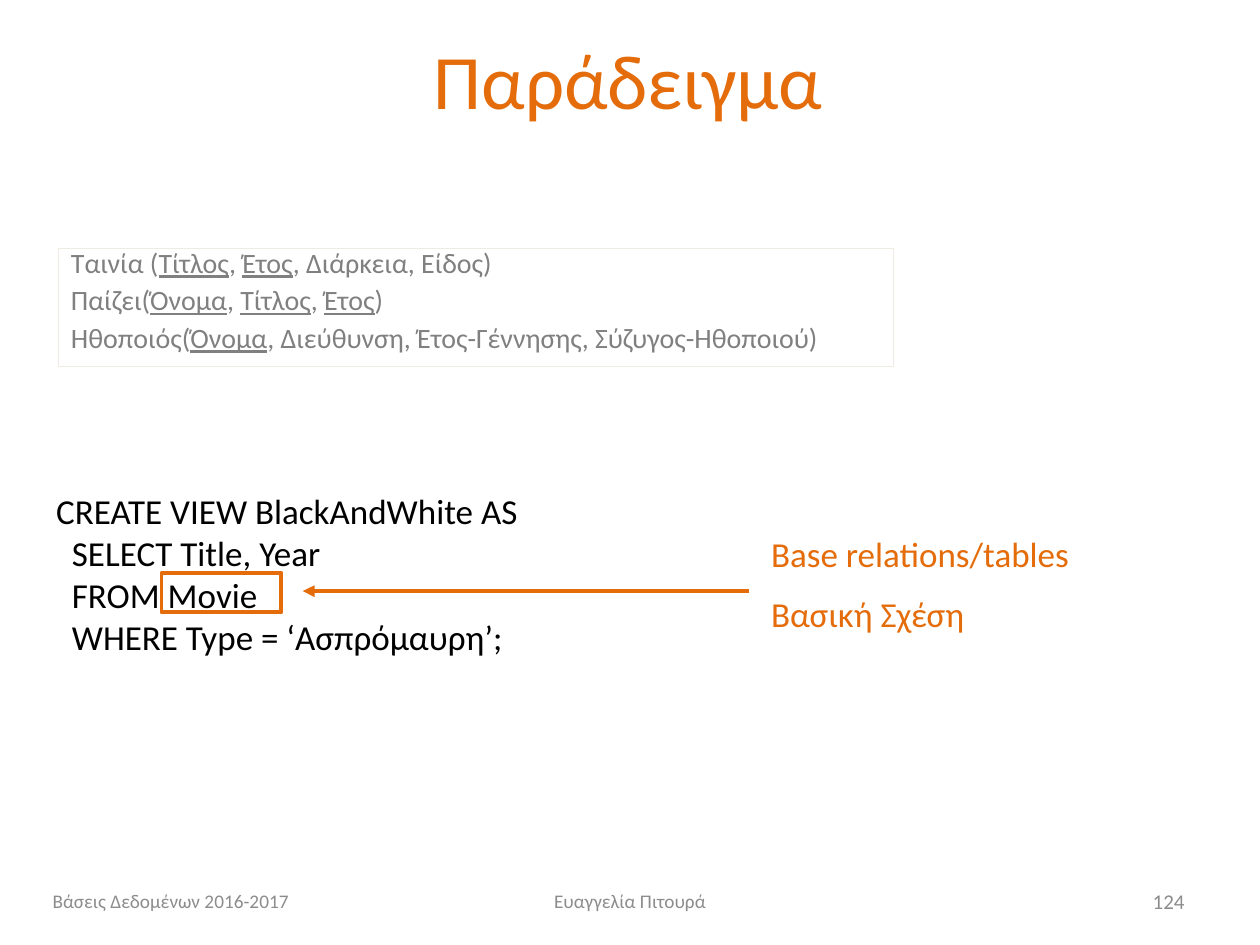
from lxml.etree import SubElement
from pptx import Presentation
from pptx.dml.color import RGBColor
from pptx.enum.shapes import MSO_CONNECTOR, MSO_SHAPE
from pptx.enum.text import MSO_ANCHOR, MSO_AUTO_SIZE, PP_ALIGN
from pptx.oxml.ns import qn
from pptx.util import Pt

ORANGE = RGBColor(0xE4, 0x6C, 0x0A)
GRAY = RGBColor(0x80, 0x80, 0x80)
PALE = RGBColor(0x8C, 0x8C, 0x8C)
CREAM = RGBColor(0xEE, 0xEC, 0xE1)
BLACK = RGBColor(0, 0, 0)
FONT = "Calibri"

# Content: each schema line lists (text, is key) runs
TITLE = "Παράδειγμα"
SCHEMA = [
    [("Ταινία (", False), ("Τίτλος", True), (", ", False), ("Έτος", True),
     (", Διάρκεια, Είδος)", False)],
    [("Παίζει(", False), ("Όνομα", True), (", ", False), ("Τίτλος", True),
     (", ", False), ("Έτος", True), (")", False)],
    [("Ηθοποιός(", False), ("Όνομα", True),
     (", Διεύθυνση, Έτος-Γέννησης, Σύζυγος-Ηθοποιού)", False)],
]
QUERY = ["CREATE VIEW BlackAndWhite AS", "SELECT Title, Year", "FROM Movie",
         "WHERE Type = ‘Ασπρόμαυρη’;"]
LABEL = ["Base relations/tables", "Βασική Σχέση"]
# Footer: text, left, width, size, alignment
FOOTER = [
    ("Βάσεις Δεδομένων 2016-2017", 23, 168, 11, PP_ALIGN.LEFT),
    ("Ευαγγελία Πιτουρά", 246, 228, 11, PP_ALIGN.CENTER),
    ("124", 516, 168, 12, PP_ALIGN.RIGHT),
]


def style(para, size, color, align=PP_ALIGN.LEFT, before=0):
    para.font.name = FONT
    para.font.size = Pt(size)
    para.font.color.rgb = color
    para.alignment = align
    para.space_before = Pt(before)


def fill(frame, lines, size, color, align=PP_ALIGN.LEFT, before=0):
    """Write one paragraph per line; a line is text or (text, is key) runs."""
    frame.word_wrap = True
    for num, line in enumerate(lines):
        para = frame.paragraphs[0] if num == 0 else frame.add_paragraph()
        style(para, size, color, align, before)
        for text, key in [(line, False)] if isinstance(line, str) else line:
            run = para.add_run()
            run.text = text
            if key:
                run.font.underline = True


def add_text(box, *args, **kwargs):
    frame = slide.shapes.add_textbox(*map(Pt, box)).text_frame
    fill(frame, *args, **kwargs)
    return frame


def add_frame(box, color, width):
    shape = slide.shapes.add_shape(MSO_SHAPE.RECTANGLE, *map(Pt, box))
    shape.shadow.inherit = False
    shape.fill.background()
    shape.line.color.rgb = color
    shape.line.width = Pt(width)
    return shape


deck = Presentation()
deck.slide_width, deck.slide_height = Pt(720), Pt(540)
slide = deck.slides.add_slide(deck.slide_layouts[5])

# Title
title = slide.shapes.title
title.left, title.top, title.width, title.height = map(Pt, (35, 0, 648, 90))
title.text_frame.vertical_anchor = MSO_ANCHOR.MIDDLE
fill(title.text_frame, [TITLE], 44, ORANGE, PP_ALIGN.CENTER)

# Relation schemas
frame = add_frame((33.5, 142, 477, 67.5), CREAM, 0.75).text_frame
frame.vertical_anchor = MSO_ANCHOR.TOP
frame.auto_size = MSO_AUTO_SIZE.SHAPE_TO_FIT_TEXT
fill(frame, SCHEMA, 16, GRAY, before=8)
for para in frame.paragraphs:
    para.line_spacing = 0.7

# View definition, clauses indented
frame = add_text((25, 276, 657, 103), QUERY, 20, BLACK)
for para in frame.paragraphs[1:]:
    props = para._p.get_or_add_pPr()
    props.set("marL", str(Pt(9)))
    props.set("indent", "0")

# Base table: frame, arrow and label
add_frame((92.3, 327.5, 68.5, 22.5), ORANGE, 2.25)
arrow = slide.shapes.add_connector(
    MSO_CONNECTOR.STRAIGHT, Pt(173), Pt(337.8), Pt(428), Pt(337.8))
arrow.line.color.rgb = ORANGE
arrow.line.width = Pt(2.25)
SubElement(arrow.line._get_or_add_ln(), qn("a:headEnd"), type="triangle")
SubElement(arrow._element.spPr, qn("a:effectLst"))
add_text((433.5, 301, 226, 68), LABEL, 20, ORANGE, before=10)

# Footer
for text, left, width, size, align in FOOTER:
    frame = add_text((left, 500.5, width, 28.75), [text], size, PALE, align)
    frame.vertical_anchor = MSO_ANCHOR.MIDDLE

deck.save("out.pptx")
